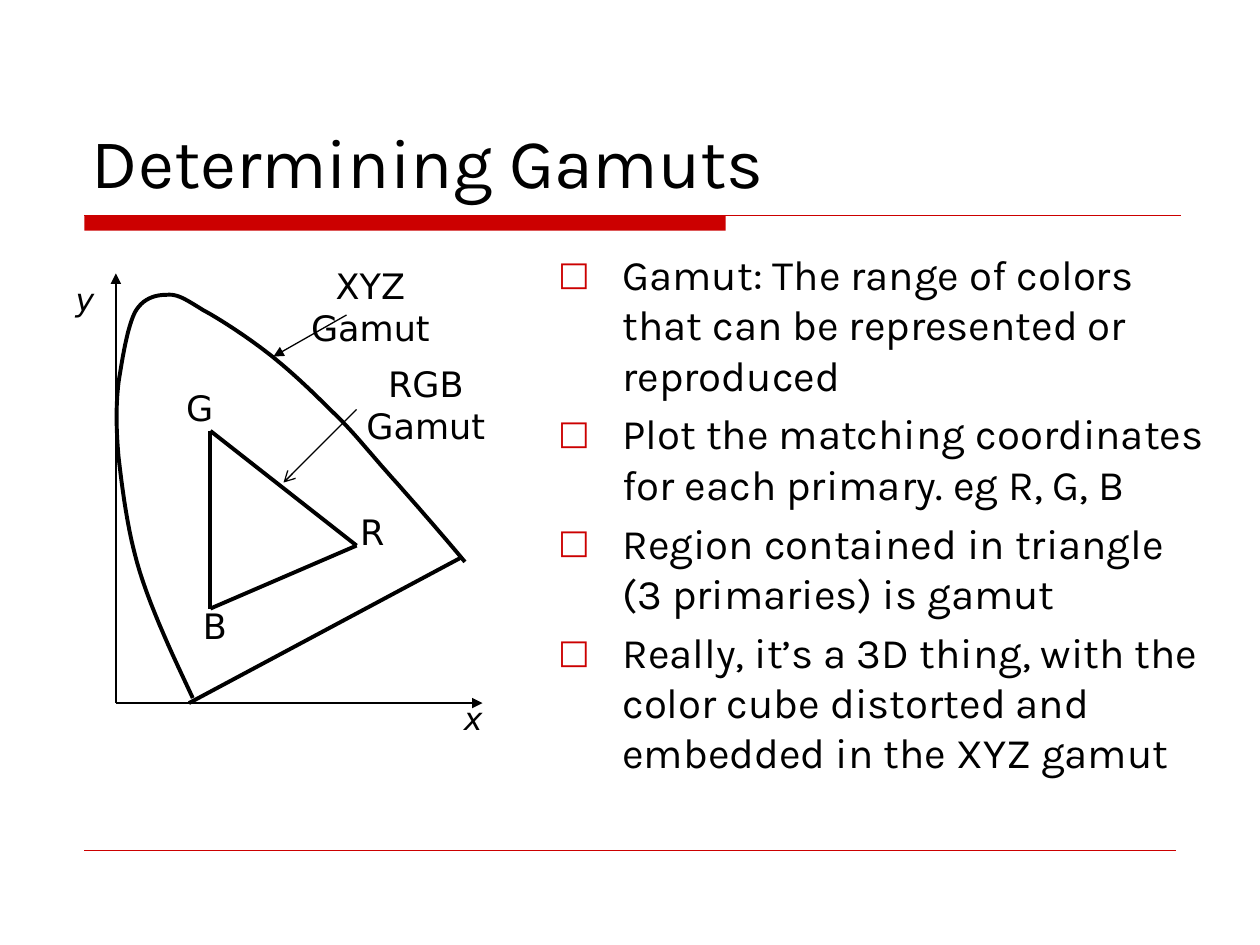
"""Build the Determining Gamuts slide with its chromaticity diagram and bullet list."""
from dataclasses import dataclass

from lxml import etree
from pptx import Presentation
from pptx.dml.color import RGBColor
from pptx.enum.shapes import MSO_CONNECTOR, MSO_SHAPE
from pptx.enum.text import MSO_ANCHOR, MSO_AUTO_SIZE, PP_ALIGN
from pptx.oxml.ns import qn
from pptx.util import Inches, Pt

STRAIGHT = MSO_CONNECTOR.STRAIGHT
RECTANGLE = MSO_SHAPE.RECTANGLE
BOTTOM, TOP = MSO_ANCHOR.BOTTOM, MSO_ANCHOR.TOP
NO_FIT = MSO_AUTO_SIZE.NONE
LEFT, CENTER = PP_ALIGN.LEFT, PP_ALIGN.CENTER
COLORS = {"accent": "CC0000", "ink": "000000"}
HEADING_FONT, LABEL_FONT = "Karla", "DejaVu Sans"
CURVE_STEPS = 12
Point = tuple[float, float]


@dataclass
class Line:
    start: Point
    end: Point
    width: float = 0.75
    color: str = "ink"
    arrow: str = ""


@dataclass
class Label:
    text: str
    left: float
    top: float
    width: float
    height: float = 0.43
    size: int = 20
    italic: bool = False
    wrap: bool = False


GREEN, RED, BLUE = (1.67, 3.42), (2.83, 4.33), (1.67, 4.83)
ORIGIN = (0.92, 5.58)

RULES = [
    Line((0.67, 1.71), (9.37, 1.71), color="accent"),
    Line((0.67, 6.75), (9.33, 6.75), 0.25, "accent"),
]
DIAGRAM_LINES = [
    Line(ORIGIN, (3.83, 5.58), arrow="triangle"),
    Line(ORIGIN, (0.92, 2.17), arrow="triangle"),
    Line((1.5, 5.58), (3.67, 4.42), 2.25),
    Line(GREEN, BLUE, 2.25),
    Line(BLUE, RED, 2.25),
    Line(GREEN, RED, 2.25),
    Line((2.75, 2.5), (2.17, 2.83), arrow="triangle"),
    Line((2.83, 3.25), (2.25, 3.83), arrow="arrow"),
]
LABELS = [
    Label("x", 3.58, 5.5, 0.35, 0.5, 18, italic=True),
    Label("y", 0.5, 2.17, 0.35, 0.5, 18, italic=True),
    Label("XYZ Gamut", 2.14, 2.05, 1.6, wrap=True),
    Label("RGB Gamut", 2.58, 2.83, 1.6, wrap=True),
    Label("G", 1.38, 3.02, 0.4),
    Label("R", 2.76, 4, 0.39),
    Label("B", 1.51, 4.75, 0.39),
]
LOCUS_START = (1.53, 5.54)
LOCUS_CURVES = [
    ((1.37, 5.2), (1.21, 4.86), (1.11, 4.54)),
    ((1.01, 4.22), (0.97, 3.87), (0.94, 3.62)),
    ((0.92, 3.37), (0.92, 3.23), (0.94, 3.04)),
    ((0.97, 2.85), (1.01, 2.6), (1.07, 2.48)),
    ((1.13, 2.37), (1.23, 2.34), (1.32, 2.34)),
    ((1.41, 2.33), (1.48, 2.38), (1.61, 2.46)),
    ((1.74, 2.53), (1.94, 2.66), (2.11, 2.79)),
    ((2.28, 2.92), (2.46, 3.09), (2.63, 3.26)),
    ((2.8, 3.42), (2.93, 3.59), (3.11, 3.79)),
    ((3.29, 3.99), (3.6, 4.35), (3.69, 4.46)),
]
BULLETS = [
    "Gamut: The range of colors that can be represented or reproduced",
    "Plot the matching coordinates for each primary. eg R, G, B",
    "Region contained in triangle (3 primaries) is gamut",
    "Really, it’s a 3D thing, with the color cube distorted and embedded in the XYZ gamut",
]


def rgb(name: str) -> RGBColor:
    """Look up a named colour."""
    return RGBColor.from_string(COLORS[name])


def apply(target, values: dict) -> None:
    """Set each attribute of the target from a dict."""
    for attribute, value in values.items():
        setattr(target, attribute, value)


def write(paragraph, text: str, font_name: str, size: int, italic: bool = False) -> None:
    """Add one formatted run to a paragraph."""
    run = paragraph.add_run()
    run.text = text
    apply(run.font, {"name": font_name, "size": Pt(size), "italic": italic})
    run.font.color.rgb = rgb("ink")


def draw_line(slide, line: Line) -> None:
    """Draw a straight line with an optional arrowhead at its end."""
    connector = slide.shapes.add_connector(
        STRAIGHT, *(Inches(value) for value in line.start + line.end)
    )
    connector.line.width = Pt(line.width)
    connector.line.color.rgb = rgb(line.color)
    properties = connector._element.spPr
    if line.arrow:
        etree.SubElement(properties.find(qn("a:ln")), qn("a:tailEnd"), type=line.arrow)
    etree.SubElement(properties, qn("a:effectLst"))


def draw_label(slide, label: Label) -> None:
    """Draw a centred diagram label."""
    bounds = (label.left, label.top, label.width, label.height)
    frame = slide.shapes.add_textbox(*map(Inches, bounds)).text_frame
    apply(frame, {"word_wrap": label.wrap, "vertical_anchor": TOP})
    paragraph = frame.paragraphs[0]
    paragraph.alignment = CENTER
    write(paragraph, label.text, LABEL_FONT, label.size, label.italic)


def bezier_points(start: Point, curves: list) -> list[Point]:
    """Sample a chain of cubic curves, with the results as lengths."""
    points = []
    for first, second, end in curves:
        for step in range(1, CURVE_STEPS + 1):
            t = step / CURVE_STEPS
            u = 1 - t
            points.append(tuple(
                Inches(u**3 * a + 3 * u * u * t * b + 3 * u * t * t * c + t**3 * d)
                for a, b, c, d in zip(start, first, second, end)
            ))
        start = end
    return points


def draw_locus(slide) -> None:
    """Draw the open curved edge of the XYZ gamut."""
    builder = slide.shapes.build_freeform(*map(Inches, LOCUS_START))
    builder.add_line_segments(bezier_points(LOCUS_START, LOCUS_CURVES), close=False)
    locus = builder.convert_to_shape()
    locus.fill.background()
    locus.line.width = Pt(2.25)
    locus.line.color.rgb = rgb("ink")
    locus.shadow.inherit = False


def draw_title_bar(slide) -> None:
    """Draw the thick bar under the title."""
    bar = slide.shapes.add_shape(RECTANGLE, *map(Inches, (0.67, 1.71, 5.09, 0.12)))
    bar.fill.solid()
    bar.fill.fore_color.rgb = rgb("accent")
    bar.line.fill.background()
    bar.shadow.inherit = False


def place(placeholder, bounds: tuple, anchor) -> None:
    """Move a placeholder and fix its text frame."""
    sides = ("left", "top", "width", "height")
    apply(placeholder, dict(zip(sides, map(Inches, bounds))))
    apply(placeholder.text_frame,
          {"auto_size": NO_FIT, "word_wrap": True, "vertical_anchor": anchor})


def add_bullet(paragraph, text: str) -> None:
    """Write a list item with a hollow square bullet."""
    apply(paragraph, {"alignment": LEFT, "space_before": Pt(4.8)})
    write(paragraph, text, HEADING_FONT, 24)
    properties = paragraph._p.get_or_add_pPr()
    properties.set("marL", str(Inches(0.51)))
    properties.set("indent", str(Inches(-0.51)))
    color = etree.SubElement(properties, qn("a:buClr"))
    etree.SubElement(color, qn("a:srgbClr"), val=COLORS["accent"])
    etree.SubElement(properties, qn("a:buSzPct"), val="80000")
    etree.SubElement(properties, qn("a:buFont"), typeface=LABEL_FONT)
    etree.SubElement(properties, qn("a:buChar"), char="□")


def main() -> None:
    """Build and save the presentation."""
    deck = Presentation()
    apply(deck, {"slide_width": Inches(10), "slide_height": Inches(7.5)})
    slide = deck.slides.add_slide(deck.slide_layouts[1])
    title, body = slide.placeholders
    place(title, (0.63, 0.33, 8.75, 1.33), BOTTOM)
    heading = title.text_frame.paragraphs[0]
    heading.alignment = LEFT
    write(heading, "Determining Gamuts", HEADING_FONT, 40)
    place(body, (4.33, 1.92, 5.33, 4.33), TOP)
    for index, text in enumerate(BULLETS):
        frame = body.text_frame
        add_bullet(frame.add_paragraph() if index else frame.paragraphs[0], text)
    draw_title_bar(slide)
    draw_locus(slide)
    for line in RULES + DIAGRAM_LINES:
        draw_line(slide, line)
    for label in LABELS:
        draw_label(slide, label)
    deck.save("out.pptx")


if __name__ == "__main__":
    main()
